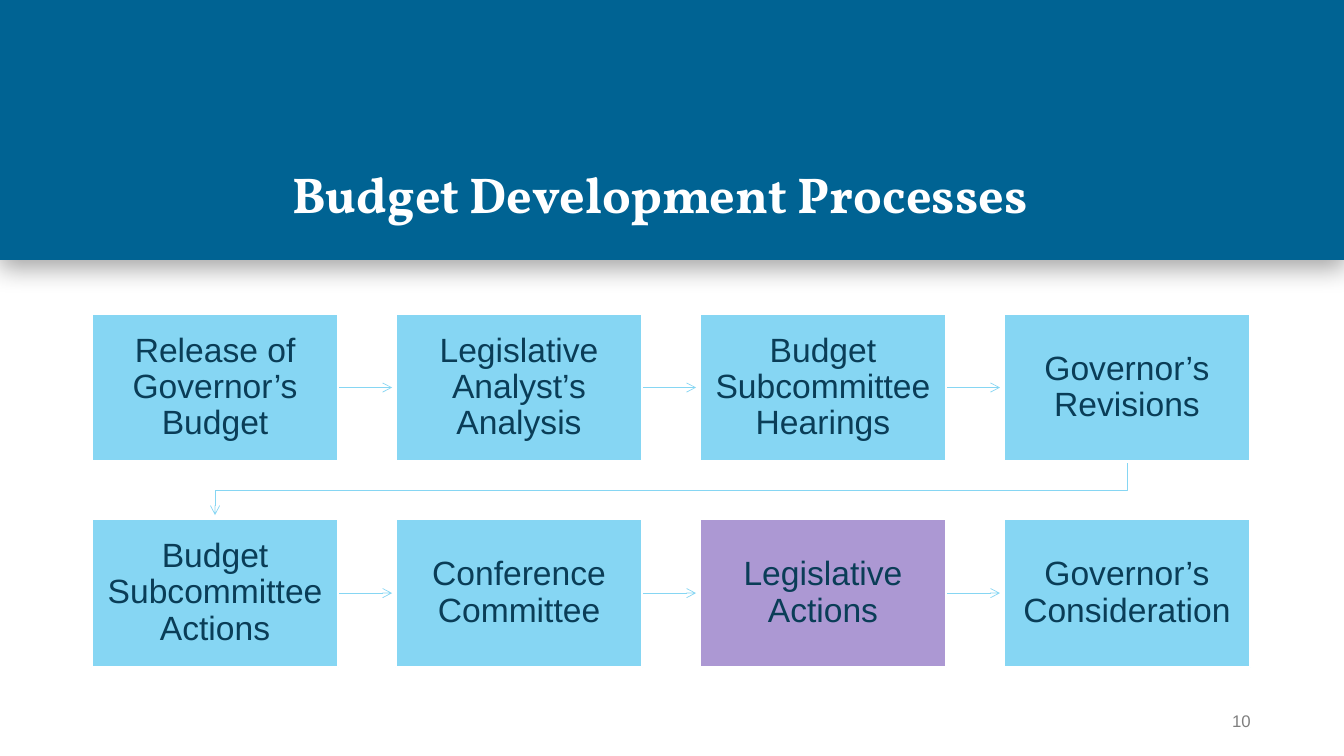
"""Build the budget development processes slide."""
from dataclasses import dataclass

from lxml import etree
from pptx import Presentation
from pptx import util as u
from pptx.dml.color import RGBColor
from pptx.enum import shapes, text
from pptx.oxml import ns
from pptx.shapes.autoshape import Shape
from pptx.slide import Slide
from pptx.text.text import TextFrame

NAVY = RGBColor(0x00, 0x63, 0x93)
SKY = RGBColor(0x86, 0xD6, 0xF3)
PURPLE = RGBColor(0xAC, 0x98, 0xD3)
INK = RGBColor(0x0A, 0x3D, 0x57)
GREY = RGBColor(0x7F, 0x7F, 0x7F)
WHITE = RGBColor(0xFF, 0xFF, 0xFF)

COLUMNS = 4
LEFT, TOP = u.Cm(2.31), u.Cm(7.9)
COLUMN_STEP, ROW_STEP = u.Cm(7.66), u.Cm(5.18)
STEP_WIDTH, STEP_HEIGHT = u.Cm(6.22), u.Cm(3.73)
ARROW_LENGTH = u.Cm(1.35)
ARROW_GAP = u.Cm(0.1)


@dataclass(frozen=True)
class Step:
    """One stage of the budget process."""

    label: str
    fill: RGBColor = SKY


STEPS = (
    Step("Release of Governor’s Budget"),
    Step("Legislative Analyst’s Analysis"),
    Step("Budget Subcommittee Hearings"),
    Step("Governor’s Revisions"),
    Step("Budget Subcommittee Actions"),
    Step("Conference Committee"),
    Step("Legislative Actions", PURPLE),
    Step("Governor’s Consideration"),
)


def write(frame: TextFrame, wording: str, *, size: float, color: RGBColor,
          font: str = "Arial", bold: bool = False, spacing: float = 1.0,
          align: text.PP_ALIGN = text.PP_ALIGN.CENTER,
          anchor: text.MSO_ANCHOR = text.MSO_ANCHOR.MIDDLE) -> None:
    """Fill a text frame with one formatted paragraph."""
    frame.text = wording
    frame.word_wrap = True
    frame.auto_size = text.MSO_AUTO_SIZE.NONE
    frame.vertical_anchor = anchor
    paragraph = frame.paragraphs[0]
    paragraph.alignment = align
    paragraph.line_spacing = spacing
    run_font = paragraph.runs[0].font
    run_font.name, run_font.size, run_font.bold = font, u.Pt(size), bold
    run_font.color.rgb = color


def style_arrow(arrow) -> None:
    """Give a connector or open outline the flow line and arrowhead."""
    arrow.line.color.rgb = SKY
    arrow.line.width = u.Pt(0.5)
    outline = arrow.element.spPr.get_or_add_ln()
    etree.SubElement(outline, ns.qn("a:tailEnd"), type="arrow")


def add_band(slide: Slide, width: int) -> None:
    """Draw the shadowed heading band behind the title."""
    band = slide.shapes.add_shape(shapes.MSO_SHAPE.RECTANGLE, 0, 0, width, u.Cm(6.55))
    band.fill.solid()
    band.fill.fore_color.rgb = NAVY
    band.line.fill.background()
    band.shadow.inherit = False
    effects = band.element.spPr.find(ns.qn("a:effectLst"))
    shadow = etree.SubElement(effects, ns.qn("a:outerShdw"), blurRad=str(u.Pt(18)),
                              dist=str(u.Pt(5)), dir="5400000", algn="t", rotWithShape="0")
    tint = etree.SubElement(shadow, ns.qn("a:srgbClr"), val="000000")
    etree.SubElement(tint, ns.qn("a:alpha"), val="35000")
    slide.shapes.title.element.addprevious(band.element)


def add_step(slide: Slide, step: Step, index: int) -> Shape:
    """Draw a process step at its place in the grid."""
    row, column = divmod(index, COLUMNS)
    box = slide.shapes.add_shape(
        shapes.MSO_SHAPE.RECTANGLE, LEFT + column * COLUMN_STEP, TOP + row * ROW_STEP,
        STEP_WIDTH, STEP_HEIGHT)
    box.shadow.inherit = False
    box.fill.solid()
    box.fill.fore_color.rgb = step.fill
    box.line.color.rgb = WHITE
    box.line.width = u.Pt(1.5)
    frame = box.text_frame
    frame.margin_left = frame.margin_right = u.Cm(0.3)
    frame.margin_top = frame.margin_bottom = u.Cm(0.33)
    write(frame, step.label, size=24, color=INK, spacing=0.9)
    return box


def add_arrow(slide: Slide, box: Shape) -> None:
    """Draw the arrow that leaves a step towards the next column."""
    x, y = box.left + box.width, box.top + box.height // 2
    arrow = slide.shapes.add_connector(
        shapes.MSO_CONNECTOR.STRAIGHT, x, y, x + ARROW_LENGTH, y)
    arrow.begin_connect(box, 3)
    style_arrow(arrow)
    etree.SubElement(arrow.element.spPr, ns.qn("a:effectLst"))
    box.element.addprevious(arrow.element)


def add_row_turn(slide: Slide, last: Shape, first: Shape) -> None:
    """Draw the bent arrow from the end of one row to the next row."""
    start_x, start_y = last.left + last.width // 2, last.top + last.height
    end_x = first.left + first.width // 2
    bend_y = (start_y + first.top) // 2
    outline = slide.shapes.build_freeform(start_x, start_y)
    outline.add_line_segments(
        [(start_x, bend_y), (end_x, bend_y), (end_x, first.top - ARROW_GAP)], close=False)
    turn = outline.convert_to_shape()
    turn.fill.background()
    turn.shadow.inherit = False
    style_arrow(turn)
    last.element.addprevious(turn.element)


def main() -> None:
    """Assemble and save the slide."""
    deck = Presentation()
    deck.slide_width, deck.slide_height = u.Cm(33.87), u.Cm(19.05)
    slide = deck.slides.add_slide(deck.slide_layouts[5])

    title = slide.shapes.title
    title.left, title.top = u.Cm(7.11), u.Cm(1.12)
    title.width, title.height = u.Cm(24.43), u.Cm(4.67)
    write(title.text_frame, "Budget Development Processes", size=36, color=WHITE,
          font="Vollkorn", bold=True, spacing=0.9, align=text.PP_ALIGN.LEFT,
          anchor=text.MSO_ANCHOR.BOTTOM)
    add_band(slide, deck.slide_width)

    page_number = slide.shapes.add_textbox(u.Cm(28.98), u.Cm(17.65), u.Cm(2.54), u.Cm(1.02))
    page_number.text_frame.margin_right = 0
    write(page_number.text_frame, "10", size=12, color=GREY, align=text.PP_ALIGN.RIGHT)

    boxes = [add_step(slide, step, index) for index, step in enumerate(STEPS)]
    for index, box in enumerate(boxes):
        if (index + 1) % COLUMNS:
            add_arrow(slide, box)
    add_row_turn(slide, boxes[COLUMNS - 1], boxes[COLUMNS])
    deck.save("out.pptx")


if __name__ == "__main__":
    main()
